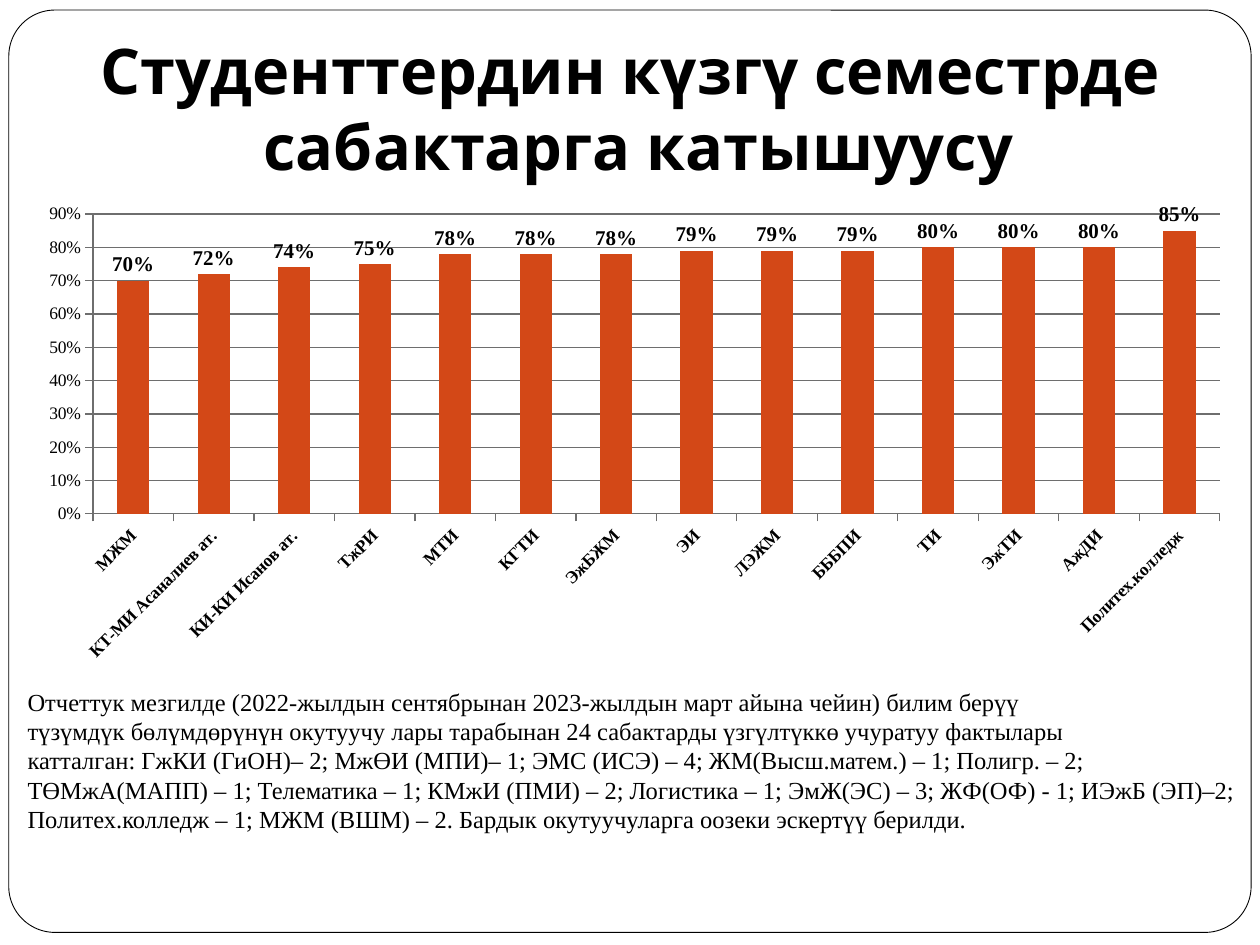
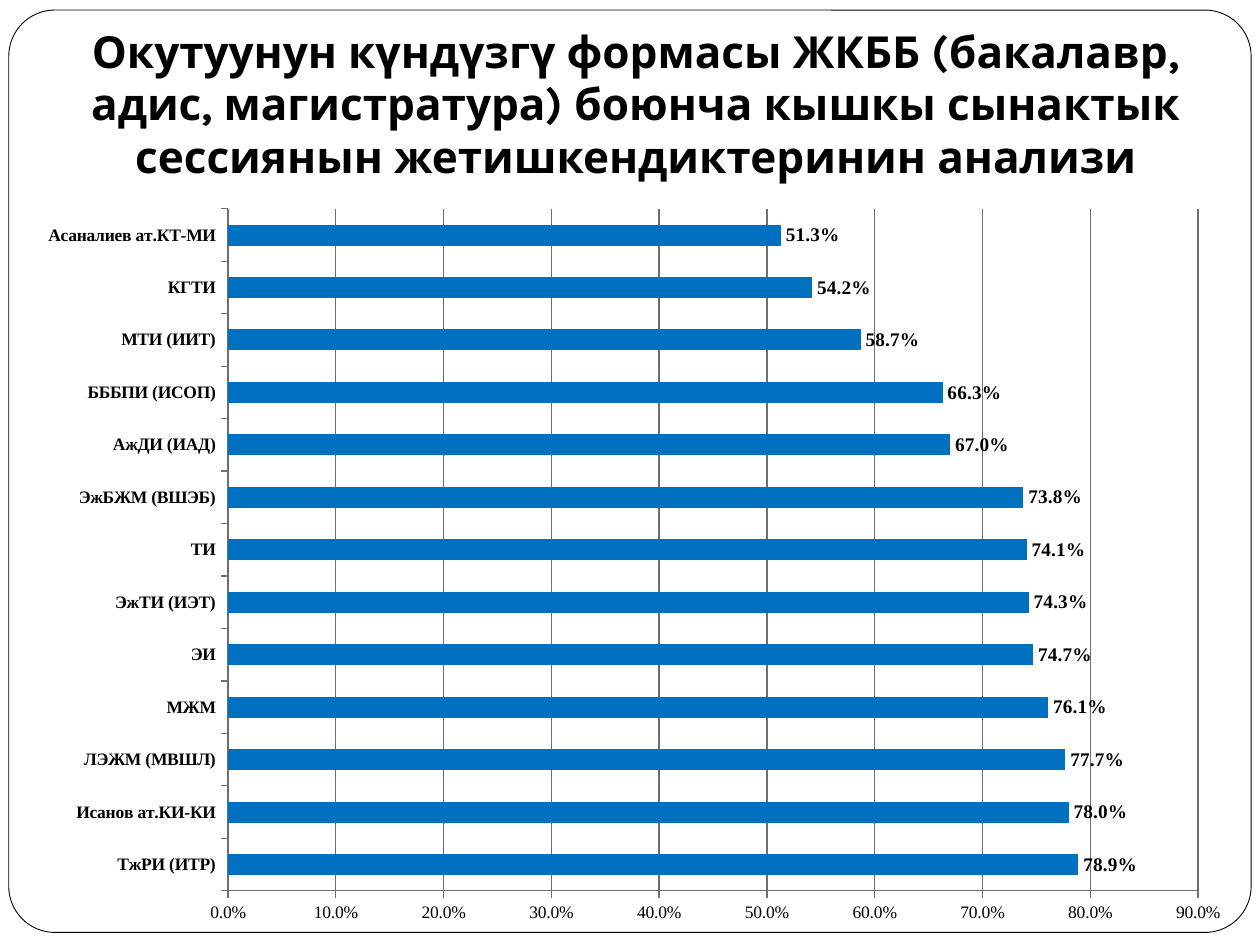
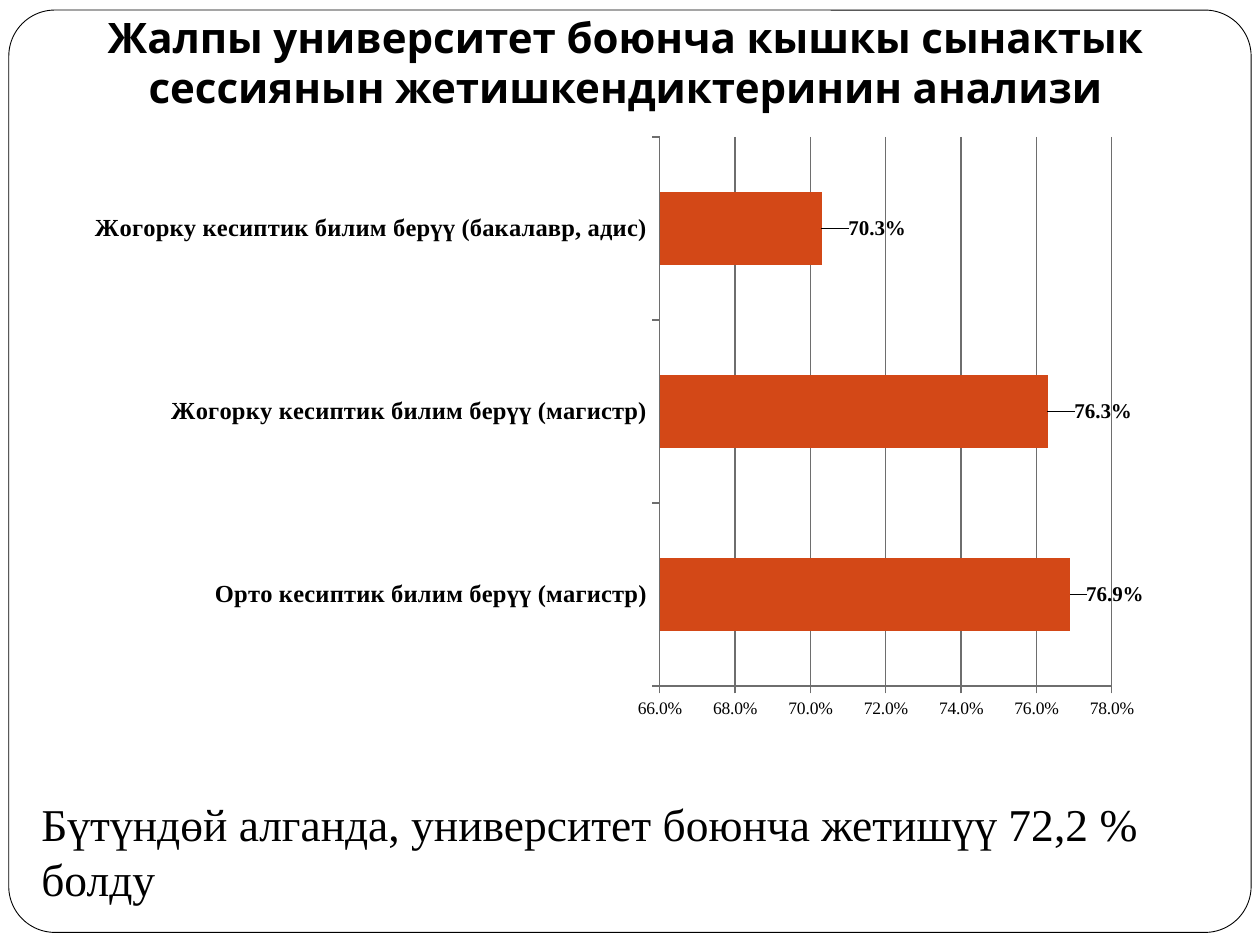
from lxml import etree
from pptx import Presentation
from pptx.chart.data import CategoryChartData
from pptx.dml.color import RGBColor
from pptx.enum.chart import XL_CHART_TYPE, XL_LABEL_POSITION, XL_TICK_MARK
from pptx.enum.shapes import MSO_SHAPE
from pptx.enum.text import MSO_ANCHOR, PP_ALIGN
from pptx.oxml.ns import qn
from pptx.util import Pt

BLACK = RGBColor(0x00, 0x00, 0x00)
WHITE = RGBColor(0xFF, 0xFF, 0xFF)
GRAY = RGBColor(0x6E, 0x6E, 0x6E)
RUST = RGBColor(0xD3, 0x48, 0x17)
BLUE = RGBColor(0x00, 0x70, 0xC0)
HEAD, BODY = "Karla", "Times New Roman"

FRAME = (5.04, 5.76, 709.92, 527.04)
COLUMN, BAR = XL_CHART_TYPE.COLUMN_CLUSTERED, XL_CHART_TYPE.BAR_CLUSTERED

RATES = [
    ("МЖМ", 0.70), ("КТ-МИ Асаналиев ат.", 0.72), ("КИ-КИ Исанов ат.", 0.74),
    ("ТжРИ", 0.75), ("МТИ", 0.78), ("КГТИ", 0.78), ("ЭжБЖМ", 0.78),
    ("ЭИ", 0.79), ("ЛЭЖМ", 0.79), ("БББПИ", 0.79), ("ТИ", 0.80),
    ("ЭжТИ", 0.80), ("АжДИ", 0.80), ("Политех.колледж", 0.85),
]
EXAMS = [
    ("ТжРИ (ИТР)", 0.789), ("Исанов ат.КИ-КИ", 0.78), ("ЛЭЖМ (МВШЛ)", 0.777),
    ("МЖМ", 0.761), ("ЭИ", 0.747), ("ЭжТИ (ИЭТ)", 0.743), ("ТИ", 0.741),
    ("ЭжБЖМ (ВШЭБ)", 0.738), ("АжДИ (ИАД)", 0.67), ("БББПИ (ИСОП)", 0.663),
    ("МТИ (ИИТ)", 0.587), ("КГТИ", 0.542), ("Асаналиев ат.КТ-МИ", 0.513),
]
LEVELS = [
    ("Орто кесиптик билим берүү (магистр)", 0.769),
    ("Жогорку кесиптик билим берүү (магистр)", 0.763),
    ("Жогорку кесиптик билим берүү (бакалавр, адис)", 0.703),
]
REPORT = [
    "Отчеттук мезгилде (2022-жылдын сентябрынан 2023-жылдын март айына чейин) "
    "билим берүү",
    "түзүмдүк бөлүмдөрүнүн окутуучу лары тарабынан 24 сабактарды үзгүлтүккө "
    "учуратуу фактылары",
    "катталган: ГжКИ (ГиОН)– 2; МжӨИ (МПИ)– 1; ЭМС (ИСЭ) – 4; "
    "ЖМ(Высш.матем.) – 1; Полигр. – 2; ТӨМжА(МАПП) – 1; Телематика – 1; "
    "КМжИ (ПМИ) – 2; Логистика – 1; ЭмЖ(ЭС) – 3; ЖФ(ОФ) - 1; ИЭжБ (ЭП)–2; "
    "Политех.колледж – 1; МЖМ (ВШМ) – 2. Бардык окутуучуларга оозеки эскертүү "
    "берилди.",
]


def points(box):
    return [Pt(side) for side in box]


def style(font, size, bold=False, face=BODY):
    font.name, font.size, font.bold = face, Pt(size), bold
    font.color.rgb = BLACK


def write(slide, box, lines, size, bold=False, face=BODY,
          align=PP_ALIGN.LEFT, anchor=MSO_ANCHOR.TOP, foot=3.6):
    frame = slide.shapes.add_textbox(*points(box)).text_frame
    frame.word_wrap = True
    frame.vertical_anchor = anchor
    frame.margin_bottom = Pt(foot)
    for i, line in enumerate(lines):
        para = frame.paragraphs[0] if i == 0 else frame.add_paragraph()
        para.text = line
        para.alignment = align
        for run in para.runs:
            style(run.font, size, bold, face)


def start(deck, title, box, size):
    """Add a slide with the rounded frame and its title."""
    slide = deck.slides.add_slide(deck.slide_layouts[6])
    card = slide.shapes.add_shape(MSO_SHAPE.ROUNDED_RECTANGLE, *points(FRAME))
    card.adjustments[0] = 0.05
    card.shadow.inherit = False
    card.fill.solid()
    card.fill.fore_color.rgb = WHITE
    card.line.color.rgb = BLACK
    card.line.width = Pt(0.5)
    write(slide, box, [title], size, bold=True, face=HEAD,
          align=PP_ALIGN.CENTER, anchor=MSO_ANCHOR.BOTTOM, foot=7.2)
    return slide


def layout(**parts):
    """Return a manual chart layout; each part is a tag and its value."""
    root = etree.Element(qn("c:layout"))
    manual = etree.SubElement(root, qn("c:manualLayout"))
    for tag, val in parts.items():
        etree.SubElement(manual, qn("c:" + tag)).set("val", str(val))
    return root


def place(chart, box, inset):
    """Fix the plot area at inset (left, top, width, height) in the box."""
    wide, high = box[2:]
    left, top, width, height = inset
    area = chart.plots[0]._element.getparent()
    for old in area.findall(qn("c:layout")):
        area.remove(old)
    area.insert(0, layout(
        layoutTarget="inner", xMode="edge", yMode="edge",
        x=left / wide, y=top / high, w=width / wide, h=height / high))


def shift(series, moves, fmt, size):
    """Move single value labels by fractions of the chart size."""
    for i, (dx, dy) in enumerate(moves):
        label = series.points[i].data_label
        style(label.font, size, True)
        label.position = XL_LABEL_POSITION.OUTSIDE_END
        index = label._dLbl.find(qn("c:idx"))
        form = etree.Element(qn("c:numFmt"), formatCode=fmt, sourceLinked="0")
        index.addnext(form)
        index.addnext(layout(x=dx, y=dy))


def plot(slide, box, kind, rows, color, inset, scale, fmt,
         mark=12, names=10, turn=None, moves=()):
    data = CategoryChartData(number_format=fmt)
    data.categories = [name for name, _ in rows]
    data.add_series("Series 1", [val for _, val in rows])
    chart = slide.shapes.add_chart(kind, *points(box), data).chart
    chart.has_legend = chart.has_title = False
    style(chart.font, 10)
    place(chart, box, inset)

    bars = chart.plots[0]
    bars.gap_width = 150
    bars.vary_by_categories = False
    series = bars.series[0]
    series.format.fill.solid()
    series.format.fill.fore_color.rgb = color
    tags = series.data_labels
    tags.show_value = True
    tags.number_format, tags.number_format_is_linked = fmt, False
    tags.position = XL_LABEL_POSITION.OUTSIDE_END
    style(tags.font, mark, True)
    shift(series, moves, fmt, mark)

    cats, vals = chart.category_axis, chart.value_axis
    vals.minimum_scale, vals.maximum_scale, vals.major_unit = scale
    vals.has_major_gridlines = True
    vals.tick_labels.number_format = fmt
    vals.tick_labels.number_format_is_linked = False
    style(vals.tick_labels.font, 10)
    style(cats.tick_labels.font, names, True)
    if turn is not None:
        body = cats._element.find(qn("c:txPr")).find(qn("a:bodyPr"))
        body.set("rot", str(turn * 60000))
        body.set("vert", "horz")
    for axis in (cats, vals):
        axis.major_tick_mark = XL_TICK_MARK.OUTSIDE
        axis.minor_tick_mark = XL_TICK_MARK.NONE
    for part in (cats, vals, vals.major_gridlines):
        part.format.line.color.rgb = GRAY
        part.format.line.width = Pt(0.75)


def attend(deck):
    slide = start(deck, "Студенттердин күзгү семестрде\v сабактарга катышуусу",
                  (14.4, 21.6, 691.92, 90), 36)
    write(slide, (8.64, 388.8, 711.36, 108.72), REPORT, 14)
    plot(slide, (14.4, 111.6, 697.68, 272.16), COLUMN, RATES, RUST,
         (38.7, 10.7, 644, 171.4), (0, 0.9, 0.1), "0%", turn=-45)


def session(deck):
    slide = start(deck, "Окутуунун күндүзгү формасы ЖКББ (бакалавр, адис, "
                  "магистратура) боюнча кышкы сынактык сессиянын "
                  "жетишкендиктеринин анализи",
                  (14.4, 21.6, 697.68, 90), 25.2)
    plot(slide, (14.4, 111.6, 697.68, 425.52), BAR, EXAMS, BLUE,
         (115.9, 7.8, 554.3, 389.7), (0, 0.9, 0.1), "0.0%", mark=11)


def overall(deck):
    slide = start(deck, "Жалпы университет боюнча кышкы сынактык сессиянын "
                  "жетишкендиктеринин анализи",
                  (14.4, 31.68, 686.16, 39.6), 24)
    plot(slide, (42.48, 71.28, 617.76, 345.6), BAR, LEVELS, RUST,
         (334.6, 7, 258.3, 313.7), (0.66, 0.78, 0.02), "0.0%", names=14,
         moves=[(0.01, 0), (0.02, 0), (0.02, 0)])
    write(slide, (16.56, 451.44, 683.28, 70.56),
          ["Бүтүндөй алганда, университет боюнча жетишүү 72,2 % болду"], 26)


def main():
    deck = Presentation()
    deck.slide_width, deck.slide_height = Pt(720), Pt(540)
    for build in (attend, session, overall):
        build(deck)
    deck.save("out.pptx")


if __name__ == "__main__":
    main()
